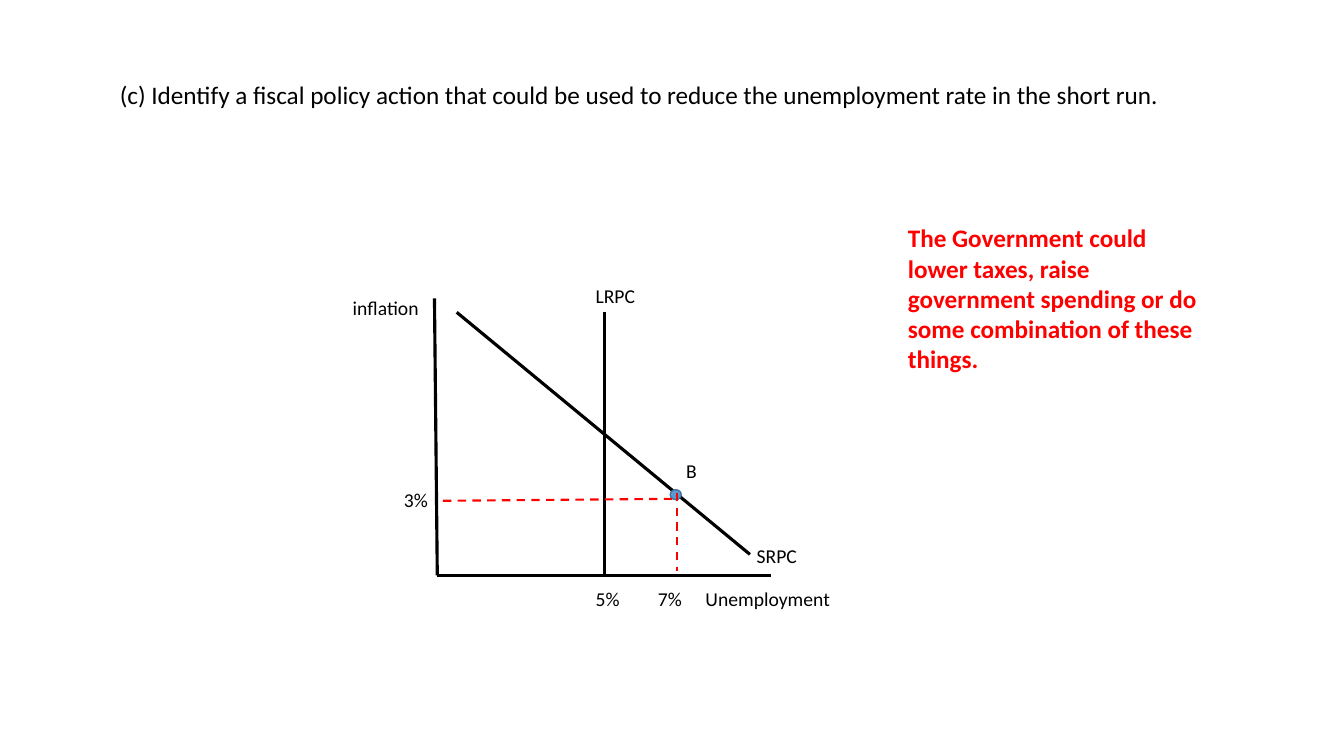
import dataclasses

import pptx
import pptx.dml.color
import pptx.enum.dml
import pptx.enum.shapes
import pptx.enum.text
import pptx.shapes.autoshape
import pptx.slide
import pptx.text.text
import pptx.util
from lxml import etree

Cm = pptx.util.Cm
Pt = pptx.util.Pt
RGBColor = pptx.dml.color.RGBColor


@dataclasses.dataclass(frozen=True)
class Theme:
    font: str = "Calibri"
    ink: str = "000000"
    accent: str = "FF0000"
    point_fill: str = "5B9BD5"
    point_line: str = "43739E"
    label_size: int = 14
    text_size: int = 18
    curve_width: float = 2.25
    guide_width: float = 1.5
    point_width: float = 1


@dataclasses.dataclass(frozen=True)
class Segment:
    start: tuple[float, float]
    end: tuple[float, float]


@dataclasses.dataclass(frozen=True)
class Label:
    text: str
    left: float
    top: float
    width: float = 3.81
    height: float = 0.86


THEME = Theme()
SHORT_LABEL = 1.47
TICK_TOP = 14.66
AXIS_Y = 14.5
ORIGIN_X = 11.02
LRPC_X = 15.24
CURVE_TOP = 7.87
POINT_X = 17.07

QUESTION = (
    "(c) Identify a fiscal policy action that could be used "
    "to reduce the unemployment rate in the short run."
)
ANSWER = Label(
    "The Government could lower taxes, raise government spending "
    "or do some combination of these things.",
    22.63, 5.49, 7.82, 4.11,
)

AXES_AND_CURVES = [
    Segment((10.95, 7.52), (ORIGIN_X, AXIS_Y)),
    Segment((19.43, AXIS_Y), (ORIGIN_X, AXIS_Y)),
    Segment((18.9, 13.97), (11.51, CURVE_TOP)),
    Segment((LRPC_X, AXIS_Y), (LRPC_X, CURVE_TOP)),
]
GUIDES = [
    Segment((POINT_X, 12.42), (POINT_X, 14.38)),
    Segment((16.94, 12.57), (ORIGIN_X, 12.62)),
]
GRAPH_LABELS = [
    Label("Unemployment", 17.53, TICK_TOP),
    Label("inflation", 8.64, 7.32),
    Label("SRPC", 18.82, 13.59),
    Label("LRPC", 14.76, 7.04),
    Label("5%", 14.76, TICK_TOP, SHORT_LABEL),
    Label("7%", 16.33, TICK_TOP, SHORT_LABEL),
    Label("3%", 9.93, 12.17, SHORT_LABEL),
    Label("B", 17.04, 11.43),
]


def add_span(para: pptx.text.text._Paragraph, text: str, size: int,
             color: str, bold: bool = False) -> None:
    span = para.add_run()
    span.text = text
    span.font.name = THEME.font
    span.font.size = Pt(size)
    span.font.bold = bold
    span.font.color.rgb = RGBColor.from_string(color)


def add_question(page: pptx.slide.Slide) -> None:
    title = page.shapes.title
    title.left, title.top = Cm(1.5), Cm(1.09)
    title.width, title.height = Cm(30.02), Cm(1.8)
    frame = title.text_frame
    frame.word_wrap = True
    frame.auto_size = pptx.enum.text.MSO_AUTO_SIZE.NONE
    frame.vertical_anchor = pptx.enum.text.MSO_ANCHOR.BOTTOM
    frame.margin_left = Cm(1.52)
    para = frame.paragraphs[0]
    para.alignment = pptx.enum.text.PP_ALIGN.LEFT
    add_span(para, QUESTION, THEME.text_size, THEME.ink)


def add_label(page: pptx.slide.Slide, label: Label, size: int,
              color: str, bold: bool = False) -> None:
    box = page.shapes.add_textbox(
        Cm(label.left), Cm(label.top), Cm(label.width), Cm(label.height)
    )
    frame = box.text_frame
    frame.word_wrap = True
    frame.auto_size = pptx.enum.text.MSO_AUTO_SIZE.SHAPE_TO_FIT_TEXT
    add_span(frame.paragraphs[0], label.text, size, color, bold)


def add_segment(page: pptx.slide.Slide, segment: Segment, color: str,
                width: float, dashed: bool = False) -> None:
    line = page.shapes.add_connector(
        pptx.enum.shapes.MSO_CONNECTOR.STRAIGHT,
        *map(Cm, segment.start + segment.end),
    )
    line.line.color.rgb = RGBColor.from_string(color)
    line.line.width = Pt(width)
    if dashed:
        line.line.dash_style = pptx.enum.dml.MSO_LINE.DASH
    properties = line._element.spPr
    etree.SubElement(properties, pptx.oxml.ns.qn("a:effectLst"))


def add_point(page: pptx.slide.Slide) -> None:
    """Mark point B on the short-run curve."""
    point = page.shapes.add_shape(
        pptx.enum.shapes.MSO_SHAPE.OVAL,
        Cm(16.89), Cm(12.34), Cm(0.28), Cm(0.25),
    )
    point.shadow.inherit = False
    point.fill.solid()
    point.fill.fore_color.rgb = RGBColor.from_string(THEME.point_fill)
    point.line.color.rgb = RGBColor.from_string(THEME.point_line)
    point.line.width = Pt(THEME.point_width)


def main() -> None:
    deck = pptx.Presentation()
    deck.slide_width, deck.slide_height = Cm(33.87), Cm(19.05)
    page = deck.slides.add_slide(deck.slide_layouts.get_by_name("Title Only"))
    add_question(page)
    for segment in AXES_AND_CURVES:
        add_segment(page, segment, THEME.ink, THEME.curve_width)
    add_point(page)
    for segment in GUIDES:
        add_segment(page, segment, THEME.accent, THEME.guide_width, dashed=True)
    for label in GRAPH_LABELS:
        add_label(page, label, THEME.label_size, THEME.ink)
    add_label(page, ANSWER, THEME.text_size, THEME.accent, bold=True)
    deck.save("out.pptx")


if __name__ == "__main__":
    main()
